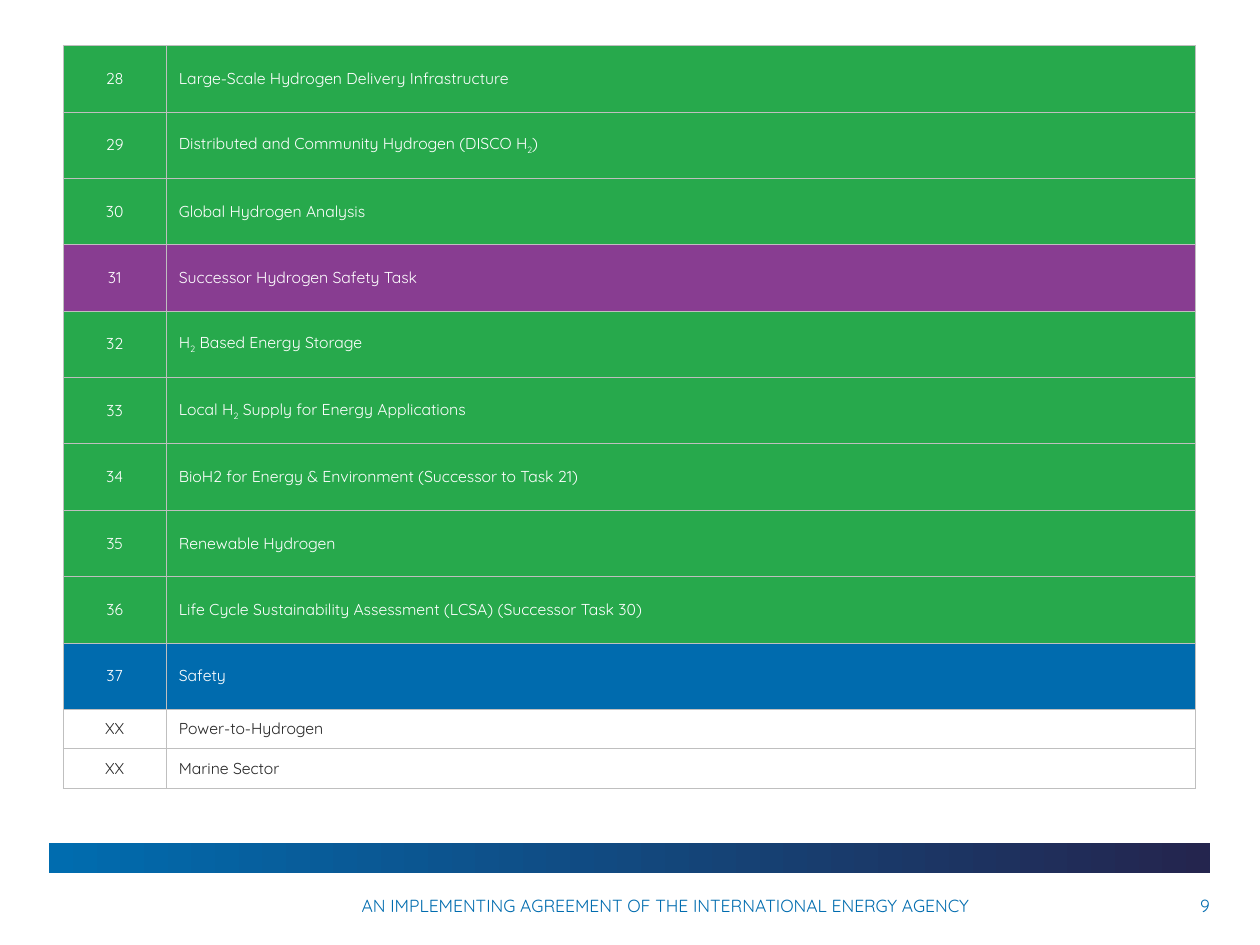
from lxml import etree
from pptx import Presentation
from pptx.dml.color import RGBColor
from pptx.enum.shapes import MSO_SHAPE
from pptx.enum.text import MSO_ANCHOR, MSO_AUTO_SIZE, PP_ALIGN
from pptx.oxml.ns import qn
from pptx.util import Inches, Pt

LEFT, CENTER, RIGHT = PP_ALIGN.LEFT, PP_ALIGN.CENTER, PP_ALIGN.RIGHT
MIDDLE = MSO_ANCHOR.MIDDLE
GROW = MSO_AUTO_SIZE.SHAPE_TO_FIT_TEXT
RECTANGLE = MSO_SHAPE.RECTANGLE

THEME = {
    "font": "Quicksand", "table_size": 9, "footer_size": 10,
    "green": "27A94C", "purple": "883D91", "blue": "006BAE",
    "light": "FFFFFF", "dark": "262626", "border": "BFBFBF",
    "footer": "006CAF", "navy": "24254E",
}

# Task number, title in pieces (every second piece is a subscript), row colour
TASKS = [
    ("28", ["Large-Scale Hydrogen Delivery Infrastructure"], "green"),
    ("29", ["Distributed and Community Hydrogen (DISCO H", "2", ")"], "green"),
    ("30", ["Global Hydrogen Analysis"], "green"),
    ("31", ["Successor Hydrogen Safety Task"], "purple"),
    ("32", ["H", "2", " Based Energy Storage"], "green"),
    ("33", ["Local H", "2", " Supply for Energy Applications"], "green"),
    ("34", ["BioH2 for Energy & Environment (Successor to Task 21)"], "green"),
    ("35", ["Renewable Hydrogen"], "green"),
    ("36", ["Life Cycle Sustainability Assessment (LCSA) (Successor Task 30)"], "green"),
    ("37", ["Safety"], "blue"),
    ("XX", ["Power-to-Hydrogen"], None),
    ("XX", ["Marine Sector"], None),
]
FOOTER = [
    ("9", 9.21, 0.39, RIGHT),
    ("AN IMPLEMENTING AGREEMENT OF THE INTERNATIONAL ENERGY AGENCY", 2.87, 5.02, LEFT),
]
COLUMN_WIDTHS = [0.82, 8.17]
COLORED_HEIGHT = 5.27
PLAIN_HEIGHTS = [0.31, 0.32]


def color(name):
    return RGBColor.from_string(THEME[name])


def add_span(para, text, size, color_name, subscript=False):
    span = para.add_run()
    span.text = text
    span.font.name = THEME["font"]
    span.font.size = Pt(THEME[size])
    span.font.color.rgb = color(color_name)
    if subscript:
        span.font._element.set("baseline", "-25000")


def add_borders(cell):
    properties = cell._tc.get_or_add_tcPr()
    for position, side in enumerate(("lnL", "lnR", "lnT", "lnB")):
        line = etree.Element(qn(f"a:{side}"), w=str(Pt(0.25)))
        fill = etree.SubElement(line, qn("a:solidFill"))
        etree.SubElement(fill, qn("a:srgbClr"), val=THEME["border"])
        properties.insert(position, line)


def fill_cell(cell, pieces, align, fill_name):
    cell.vertical_anchor = MIDDLE
    cell.margin_left = cell.margin_right = Inches(0.1)
    cell.margin_top = cell.margin_bottom = 0
    if fill_name:
        cell.fill.solid()
        cell.fill.fore_color.rgb = color(fill_name)
    else:
        cell.fill.background()
    add_borders(cell)
    para = cell.text_frame.paragraphs[0]
    para.alignment = align
    if fill_name or align == LEFT:
        hanging = Inches(0.44)
        properties = para._p.get_or_add_pPr()
        properties.set("marL", str(hanging))
        properties.set("indent", str(-hanging))
    for index, piece in enumerate(pieces):
        add_span(para, piece, "table_size", "light" if fill_name else "dark", index % 2 == 1)


def add_footer(page):
    bar = page.shapes.add_shape(RECTANGLE, Inches(0.39), Inches(6.69), Inches(9.21), Inches(0.24))
    bar.shadow.inherit = False
    bar.line.fill.background()
    bar.fill.gradient()
    bar.fill.gradient_angle = 0
    for stop, name in zip(bar.fill.gradient_stops, ("footer", "navy")):
        stop.color.rgb = color(name)
    for text, left, width, align in FOOTER:
        box = page.shapes.add_textbox(Inches(left), Inches(7.1), Inches(width), Inches(0.17))
        frame = box.text_frame
        frame.word_wrap = True
        frame.auto_size = GROW
        frame.margin_left = frame.margin_right = frame.margin_top = frame.margin_bottom = 0
        para = frame.paragraphs[0]
        para.alignment = align
        add_span(para, text, "footer_size", "footer")


def add_task_table(page):
    colored_count = len(TASKS) - len(PLAIN_HEIGHTS)
    heights = [COLORED_HEIGHT / colored_count] * colored_count + PLAIN_HEIGHTS
    table = page.shapes.add_table(
        len(TASKS), len(COLUMN_WIDTHS), Inches(0.5), Inches(0.36),
        Inches(sum(COLUMN_WIDTHS)), Inches(sum(heights))).table
    table.first_row = table.horz_banding = False
    for column, width in zip(table.columns, COLUMN_WIDTHS):
        column.width = Inches(width)
    for row, height, (number, title, fill_name) in zip(table.rows, heights, TASKS):
        row.height = Inches(height)
        fill_cell(row.cells[0], [number], CENTER, fill_name)
        fill_cell(row.cells[1], title, LEFT, fill_name)


def main():
    deck = Presentation()
    deck.slide_width, deck.slide_height = Inches(10), Inches(7.5)
    page = deck.slides.add_slide(deck.slide_layouts[6])
    add_footer(page)
    add_task_table(page)
    deck.save("out.pptx")


if __name__ == "__main__":
    main()
